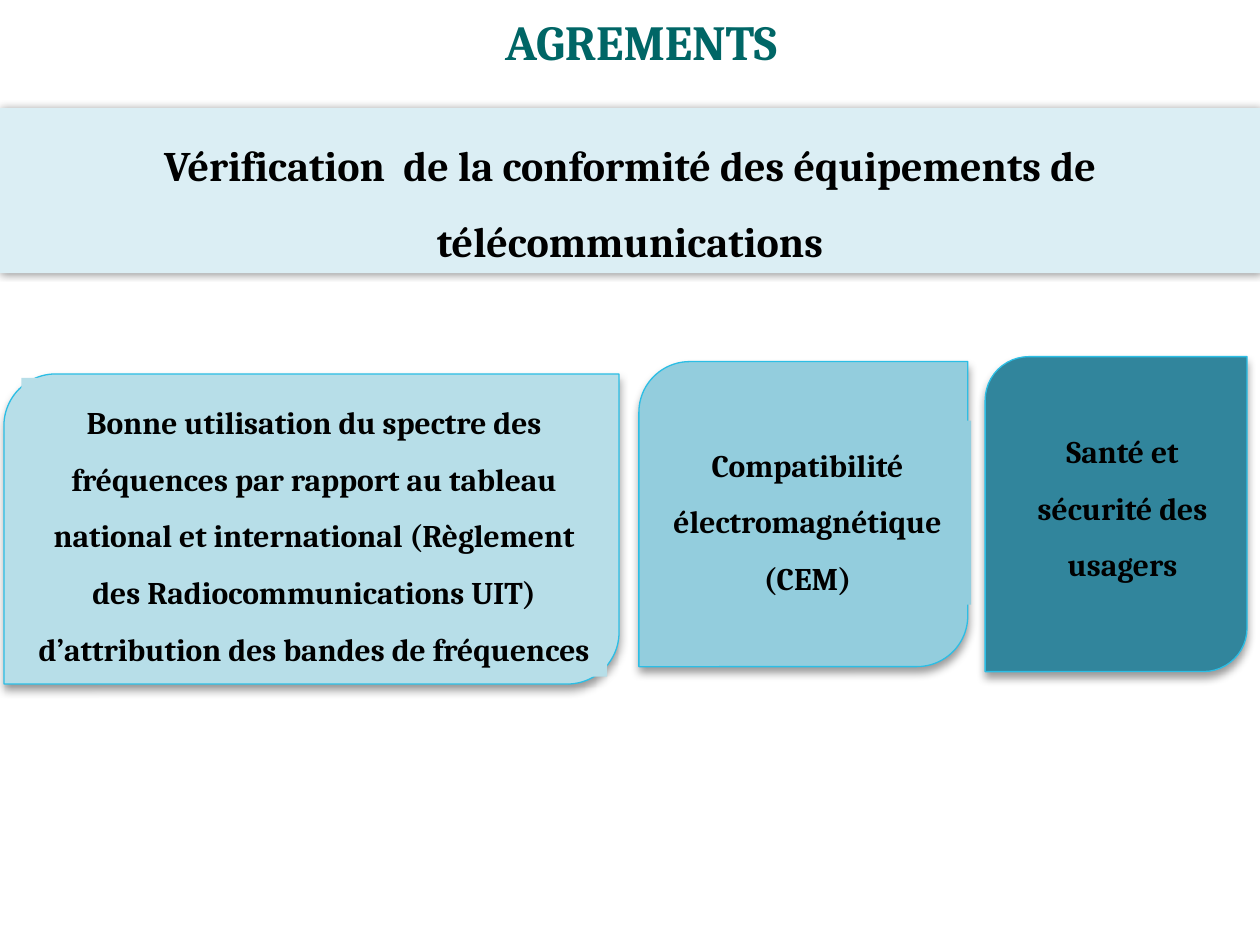
from lxml.etree import SubElement
from pptx import Presentation
from pptx.dml.color import RGBColor
from pptx.enum.shapes import MSO_SHAPE
from pptx.enum.text import MSO_ANCHOR, MSO_AUTO_SIZE, PP_ALIGN
from pptx.oxml.ns import qn
from pptx.util import Cm, Pt

# Content: boxes are left, top, width, height in cm
TITLE = ("AGREMENTS", (9.93, 0.1, 7.14, 1.45))
BANNER = ("Vérification  de la conformité des équipements de télécommunications",
          (0, 2.18, 25.4, 3.33))
CARDS = [  # text, colour, card box, text box
    ("Santé et sécurité des usagers", "31859C",
     (19.86, 7.19, 5.28, 6.35), (20.6, 8.2, 4.06, 4.78)),
    ("Bonne utilisation du spectre des fréquences par rapport au tableau "
     "national et international (Règlement des Radiocommunications UIT) "
     "d’attribution des bandes de fréquences", "B7DEE8",
     (0.08, 7.54, 12.4, 6.25), (0.43, 7.62, 11.81, 6.02)),
    ("Compatibilité électromagnétique (CEM)", "93CDDD",
     (12.88, 7.29, 6.63, 6.15), (12.98, 8.48, 6.6, 3.71)),
]

THEME = {
    "font": "Cambria", "ink": "000000", "title": "006666",
    "banner": "DBEEF4", "edge": "2CBEE5", "shade": "000000",
    "big": 28, "mid": 24, "small": 18,
}


def write(shape, text, size, color=THEME["ink"], align=PP_ALIGN.CENTER,
          space=1.5, wrap=True):
    frame = shape.text_frame
    frame.auto_size = MSO_AUTO_SIZE.NONE
    frame.word_wrap = wrap
    frame.vertical_anchor = MSO_ANCHOR.TOP
    para = frame.paragraphs[0]
    para.alignment = align
    para.line_spacing = space
    run = para.add_run()
    run.text = text
    font = run.font
    font.name, font.size, font.bold = THEME["font"], Pt(size), True
    font.color.rgb = RGBColor.from_string(color)


def block(shapes, kind, box, fill, edge=None):
    shape = shapes.add_shape(kind, *map(Cm, box))
    shape.shadow.inherit = False
    shape.fill.solid()
    shape.fill.fore_color.rgb = RGBColor.from_string(fill)
    if edge:
        shape.line.color.rgb = RGBColor.from_string(edge)
        shape.line.width = Pt(0.75)
    else:
        shape.line.fill.background()
    return shape


def shade(shape, blur, dist=0, angle=0):
    effects = shape._element.spPr.find(qn("a:effectLst"))
    outer = SubElement(effects, qn("a:outerShdw"), blurRad=str(Pt(blur)),
                       dist=str(Pt(dist)), dir=str(angle * 60000),
                       rotWithShape="0")
    color = SubElement(outer, qn("a:srgbClr"), val=THEME["shade"])
    SubElement(color, qn("a:alpha"), val="40000")


def main():
    deck = Presentation()
    deck.slide_width, deck.slide_height = Cm(25.4), Cm(19.05)
    slide = deck.slides.add_slide(deck.slide_layouts[5])

    # Title
    text, box = TITLE
    head = slide.shapes.title
    head.left, head.top, head.width, head.height = map(Cm, box)
    write(head, text, THEME["big"], color=THEME["title"],
          align=PP_ALIGN.LEFT, space=1, wrap=False)

    # Banner
    text, box = BANNER
    band = block(slide.shapes, MSO_SHAPE.RECTANGLE, box, THEME["banner"])
    shade(band, 5)
    write(band, text, THEME["mid"])

    # Cards, each grouped with its text panel
    for text, fill, box, inner in CARDS:
        group = slide.shapes.add_group_shape()
        card = block(group.shapes, MSO_SHAPE.ROUND_2_DIAG_RECTANGLE, box,
                     fill, edge=THEME["edge"])
        shade(card, 5.2, dist=3, angle=90)
        panel = block(group.shapes, MSO_SHAPE.RECTANGLE, inner, fill)
        write(panel, text, THEME["small"])

    deck.save("out.pptx")


if __name__ == "__main__":
    main()
